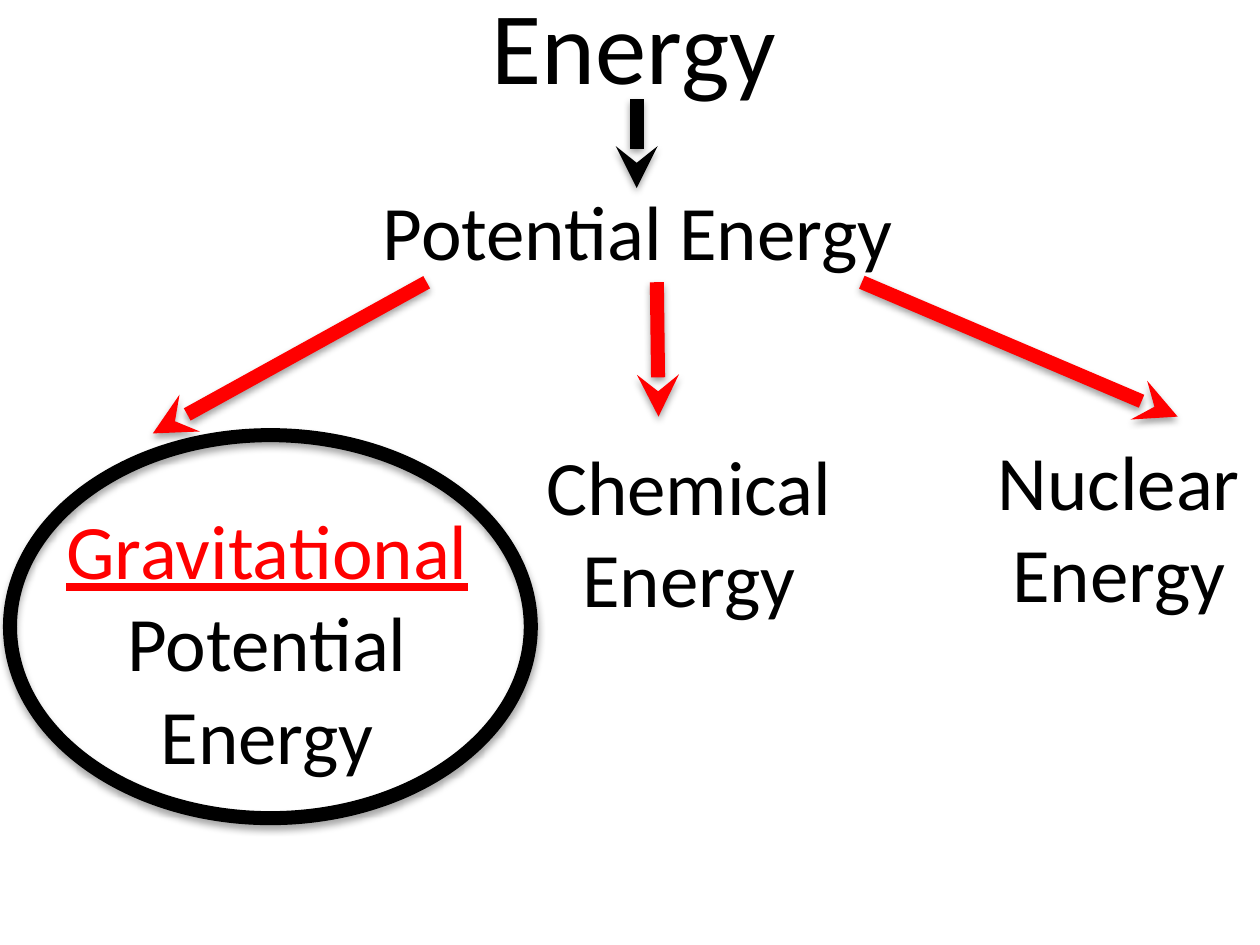
from lxml import etree
from pptx import Presentation
from pptx.dml.color import RGBColor
from pptx.enum.shapes import MSO_CONNECTOR, MSO_SHAPE
from pptx.enum.text import MSO_ANCHOR, MSO_AUTO_SIZE, PP_ALIGN
from pptx.oxml.ns import qn
from pptx.util import Inches, Pt

STRAIGHT = MSO_CONNECTOR.STRAIGHT
OVAL = MSO_SHAPE.OVAL
CENTER, LEFT = PP_ALIGN.CENTER, PP_ALIGN.LEFT
MIDDLE = MSO_ANCHOR.MIDDLE
FIXED, GROW = MSO_AUTO_SIZE.NONE, MSO_AUTO_SIZE.SHAPE_TO_FIT_TEXT

COLORS = {"ink": "000000", "accent": "FF0000"}
FONT = "Calibri"
TITLE_SIZE, LABEL_SIZE, LINE_WIDTH = 44, 33, 6
WIDTH = 7.5
HEIGHT = WIDTH * 3 / 4
BRANCH_TOP, BRANCH_END = 1.68, 2.48

# Each paragraph is a list of (text, color, underlined) runs
TITLE = [[("Energy", "ink", False)]]
TITLE_BOX = (0.4, -0.21, 6.75, 0.94)
LABELS = [
    ((2.21, 1.05, 3.4, 0.63), LEFT, [[("Potential Energy", "ink", False)]]),
    ((3.1, 2.57, 2, 1.19), CENTER,
     [[("Chemical", "ink", False)], [("Energy", "ink", False)]]),
    ((5.66, 2.54, 2, 1.19), CENTER,
     [[("Nuclear", "ink", False)], [("Energy", "ink", False)]]),
    ((0.25, 2.95, 2.68, 1.74), CENTER,
     [[("Gravitational", "accent", True), (" Potential", "ink", False)],
      [("Energy", "ink", False)]]),
]
HIGHLIGHT_BOX = (0.06, 2.59, 3.1, 2.28)
ARROWS = [
    ((3.79, 0.59), (3.79, 1.12), "ink"),
    ((2.54, BRANCH_TOP), (0.91, 2.58), "accent"),
    ((3.91, BRANCH_TOP), (3.92, BRANCH_END), "accent"),
    ((5.13, BRANCH_TOP), (7.01, BRANCH_END), "accent"),
]


def inches(lengths):
    return [Inches(length) for length in lengths]


def rgb(name):
    return RGBColor.from_string(COLORS[name])


def write(frame, paragraphs, size, align):
    frame.word_wrap = True
    frame.margin_left = frame.margin_right = Inches(0.07)
    frame.margin_top = frame.margin_bottom = Inches(0.04)
    for index, runs in enumerate(paragraphs):
        paragraph = frame.add_paragraph() if index else frame.paragraphs[0]
        paragraph.alignment = align
        for text, color, underlined in runs:
            run = paragraph.add_run()
            run.text = text
            run.font.name = FONT
            run.font.size = Pt(size)
            run.font.color.rgb = rgb(color)
            run.font.underline = underlined


def outline(shape, color, opacity, distance):
    """Draw a thick line with a soft shadow falling straight down."""
    shape.line.color.rgb = rgb(color)
    shape.line.width = Pt(LINE_WIDTH)
    effects = etree.SubElement(shape._element.spPr, qn("a:effectLst"))
    shadow = etree.SubElement(
        effects, qn("a:outerShdw"), blurRad=str(Pt(3.1)),
        dist=str(Pt(distance)), dir="5400000", rotWithShape="0")
    tint = etree.SubElement(shadow, qn("a:srgbClr"), val=COLORS["ink"])
    etree.SubElement(tint, qn("a:alpha"), val=str(opacity * 1000))


def main():
    deck = Presentation()
    deck.slide_width, deck.slide_height = inches((WIDTH, HEIGHT))
    slide = deck.slides.add_slide(deck.slide_layouts[5])
    shapes = slide.shapes

    title = shapes.title
    title.left, title.top, title.width, title.height = inches(TITLE_BOX)
    title.text_frame.vertical_anchor = MIDDLE
    title.text_frame.auto_size = FIXED
    write(title.text_frame, TITLE, TITLE_SIZE, CENTER)

    for start, end, color in ARROWS:
        arrow = shapes.add_connector(STRAIGHT, *inches(start + end))
        outline(arrow, color, opacity=37, distance=1.6)
        line = arrow._element.spPr.find(qn("a:ln"))
        etree.SubElement(line, qn("a:tailEnd"), type="stealth")

    highlight = shapes.add_shape(OVAL, *inches(HIGHLIGHT_BOX))
    highlight.fill.background()
    outline(highlight, "ink", opacity=35, distance=1.8)

    for box, align, paragraphs in LABELS:
        label = shapes.add_textbox(*inches(box))
        write(label.text_frame, paragraphs, LABEL_SIZE, align)
        label.text_frame.auto_size = GROW

    deck.save("out.pptx")


if __name__ == "__main__":
    main()
